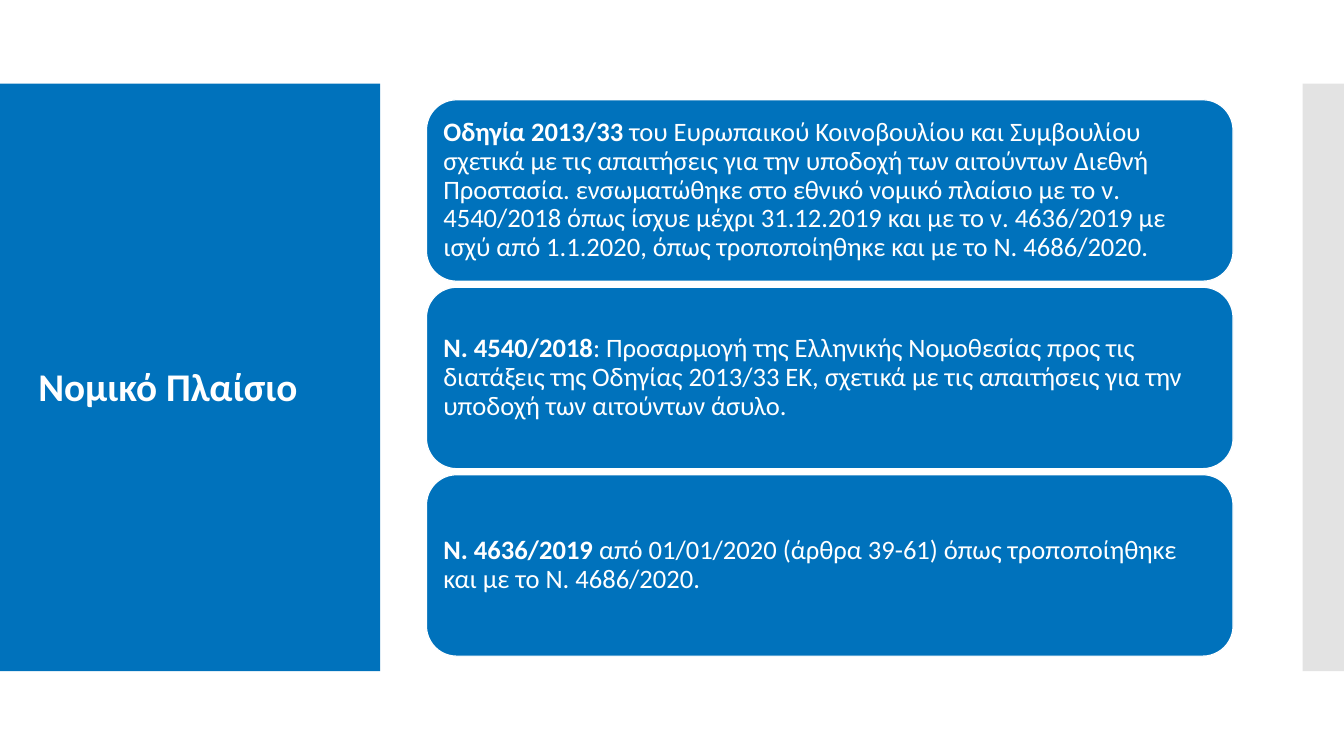
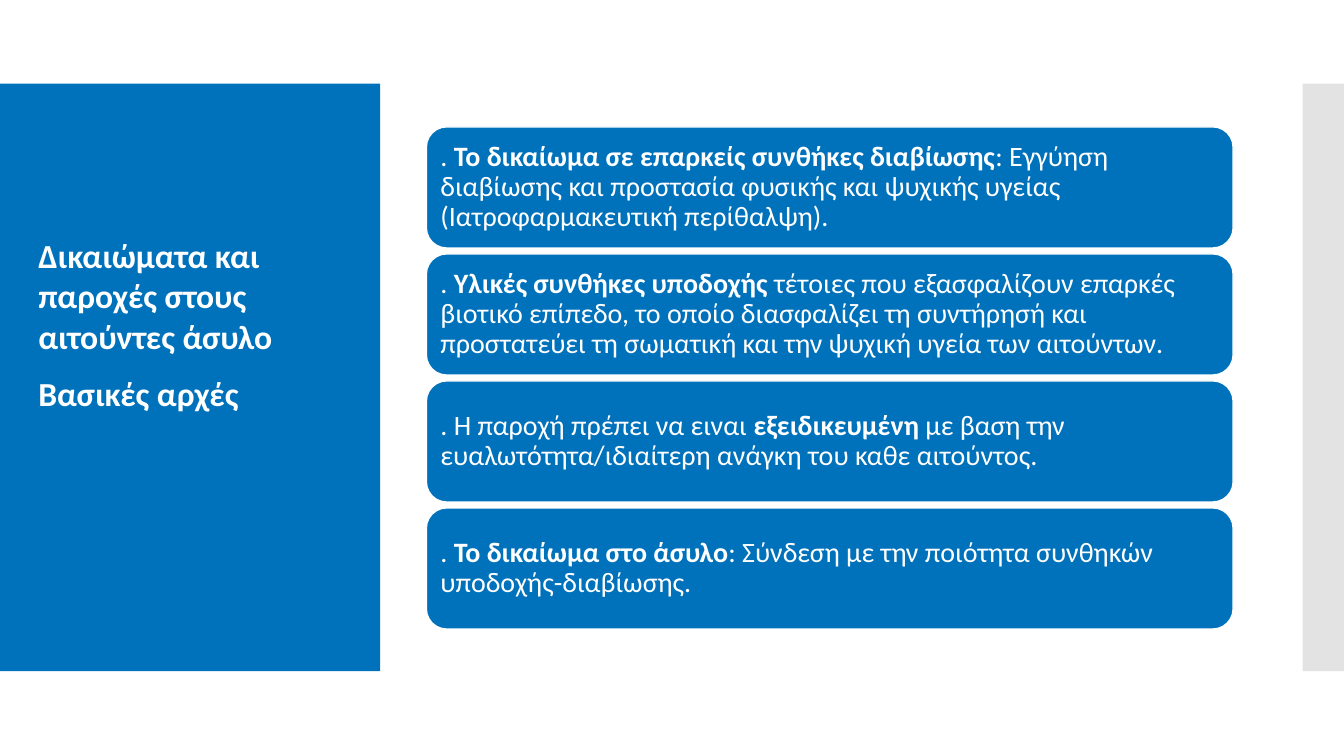
from dataclasses import dataclass

from lxml.etree import SubElement
from pptx import Presentation
from pptx.dml.color import RGBColor
from pptx.enum.shapes import MSO_SHAPE as Preset
from pptx.enum.text import MSO_ANCHOR as Anchor, MSO_AUTO_SIZE as AutoSize, PP_ALIGN as Align
from pptx.oxml.ns import qn
from pptx.util import Pt

PX = 9144


@dataclass(frozen=True)
class Theme:
    blue: RGBColor = RGBColor(0x00, 0x72, 0xBC)
    gray: RGBColor = RGBColor(0xC8, 0xC8, 0xC8)
    white: RGBColor = RGBColor(0xFF, 0xFF, 0xFF)
    font: str = "Calibri"
    title_gap: Pt = Pt(12)
    card_line: Pt = Pt(0.85)


theme = Theme()

topics = [
    {
        "title": ["Νομικό Πλαίσιο"],
        "title_top": 354,
        "title_size": 28,
        "card_height": 180,
        "card_size": 19,
        "cards": [
            [("Οδηγία 2013/33 ", True),
             ("του Ευρωπαικού Κοινοβουλίου και Συμβουλίου σχετικά με τις απαιτήσεις "
              "για την υποδοχή των αιτούντων Διεθνή Προστασία. ενσωματώθηκε στο εθνικό "
              "νομικό πλαίσιο με το ν. 4540/2018 όπως ίσχυε μέχρι 31.12.2019 και με το "
              "ν. 4636/2019 με ισχύ από 1.1.2020, όπως τροποποίηθηκε και με το "
              "Ν. 4686/2020.", False)],
            [("Ν. 4540/2018", True),
             (": Προσαρμογή της Ελληνικής Νομοθεσίας προς τις διατάξεις της Οδηγίας "
              "2013/33 ΕΚ, σχετικά με τις απαιτήσεις για την υποδοχή των αιτούντων "
              "άσυλο.", False)],
            [("Ν. 4636/2019 ", True),
             ("από 01/01/2020 (άρθρα 39-61) όπως τροποποίηθηκε και με το "
              "Ν. 4686/2020.", False)],
        ],
    },
    {
        "title": ["Δικαιώματα και παροχές στους αιτούντες άσυλο", "Βασικές αρχές"],
        "title_top": 228,
        "title_size": 24,
        "card_height": 120,
        "card_size": 20,
        "cards": [
            [(". ", False),
             ("Το δικαίωμα σε επαρκείς συνθήκες διαβίωσης", True),
             (": Εγγύηση διαβίωσης και προστασία φυσικής και ψυχικής υγείας "
              "(Ιατροφαρμακευτική περίθαλψη).", False)],
            [(". ", False),
             ("Υλικές συνθήκες υποδοχής", True),
             (" τέτοιες που εξασφαλίζουν επαρκές βιοτικό επίπεδο, το οποίο διασφαλίζει "
              "τη συντήρησή και προστατεύει τη σωματική και την ψυχική υγεία των "
              "αιτούντων.", False)],
            [(". H παροχή πρέπει να ειναι ", False),
             ("εξειδικευμένη", True),
             (" με βαση την ευαλωτότητα/ιδιαίτερη ανάγκη του καθε αιτούντος.", False)],
            [(". ", False),
             ("Το δικαίωμα στο άσυλο", True),
             (": Σύνδεση με την ποιότητα συνθηκών υποδοχής-διαβίωσης.", False)],
        ],
    },
]


def add_filled_shape(slide, preset, left, top, width, height, color):
    shape = slide.shapes.add_shape(preset, left * PX, top * PX, width * PX, height * PX)
    shape.shadow.inherit = False
    shape.fill.solid()
    shape.fill.fore_color.rgb = color
    shape.line.fill.background()
    return shape


def format_run(run, size, bold):
    run.font.name = theme.font
    run.font.size = Pt(size)
    run.font.bold = bold
    run.font.color.rgb = theme.white


presentation = Presentation()
presentation.slide_width = 1333 * PX
presentation.slide_height = 750 * PX
layout = presentation.slide_layouts.get_by_name("Title Only")
slides = [presentation.slides.add_slide(layout) for topic in topics]

for placeholder in list(layout.placeholders):
    if placeholder.placeholder_format.idx != 0:
        placeholder.element.getparent().remove(placeholder.element)

title_band = add_filled_shape(slides[0], Preset.RECTANGLE, 0, 83, 377, 583, theme.blue)
edge_band = add_filled_shape(slides[0], Preset.RECTANGLE, 1292, 83, 41, 583, theme.gray)
edge_color = edge_band.element.spPr.find(qn("a:solidFill")).find(qn("a:srgbClr"))
SubElement(edge_color, qn("a:alpha"), val="50000")
for position, band in enumerate((title_band, edge_band), start=2):
    layout.shapes.element.insert(position, band.element)

CARD_LEFT, CARD_WIDTH, CARD_GAP, CARD_MARGIN = 423, 800, 6, 8
MIDDLE, TITLE_BOTTOM = 375, 637

for slide, topic in zip(slides, topics):
    title = slide.shapes.title
    title.left, title.top = 28 * PX, topic["title_top"] * PX
    title.width, title.height = 310 * PX, (TITLE_BOTTOM - topic["title_top"]) * PX
    title_frame = title.text_frame
    title_frame.text = "\n".join(topic["title"])
    title_frame.word_wrap = True
    title_frame.auto_size = AutoSize.NONE
    title_frame.vertical_anchor = Anchor.TOP
    for paragraph in title_frame.paragraphs:
        paragraph.alignment = Align.LEFT
        paragraph.space_before = theme.title_gap
        for run in paragraph.runs:
            format_run(run, topic["title_size"], True)

    card_height = topic["card_height"]
    card_step = card_height + CARD_GAP
    first_top = MIDDLE - (len(topic["cards"]) * card_step - CARD_GAP) // 2
    for index, pieces in enumerate(topic["cards"]):
        card = add_filled_shape(slide, Preset.ROUNDED_RECTANGLE, CARD_LEFT,
                                first_top + index * card_step,
                                CARD_WIDTH, card_height, theme.blue)
        card.line.color.rgb = theme.white
        card.line.width = theme.card_line
        card_frame = card.text_frame
        card_frame.word_wrap = True
        card_frame.vertical_anchor = Anchor.MIDDLE
        card_frame.margin_left = card_frame.margin_right = CARD_MARGIN * PX
        card_frame.margin_top = card_frame.margin_bottom = CARD_MARGIN * PX
        paragraph = card_frame.paragraphs[0]
        paragraph.alignment = Align.LEFT
        paragraph.line_spacing = 0.9
        for text, bold in pieces:
            run = paragraph.add_run()
            run.text = text
            format_run(run, topic["card_size"], bold)

presentation.save("out.pptx")
